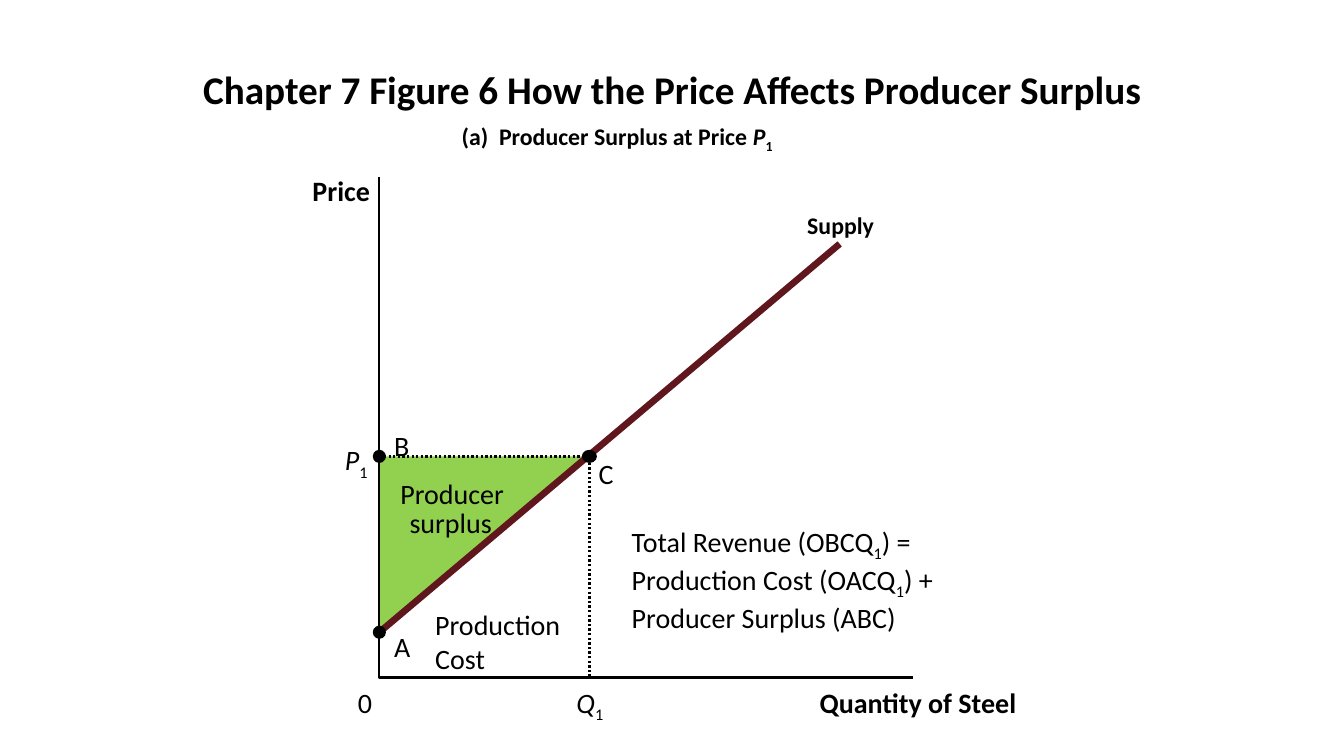
from pptx import Presentation
from pptx.dml.color import RGBColor
from pptx.enum.dml import MSO_LINE
from pptx.enum.shapes import MSO_CONNECTOR, MSO_SHAPE
from pptx.enum.text import MSO_ANCHOR, MSO_AUTO_SIZE, PP_ALIGN
from pptx.oxml.ns import qn
from pptx.util import Pt
from lxml import etree

STRAIGHT = MSO_CONNECTOR.STRAIGHT
OVAL = MSO_SHAPE.OVAL
RECTANGLE = MSO_SHAPE.RECTANGLE
DOTTED = MSO_LINE.ROUND_DOT
FIT_SHAPE = MSO_AUTO_SIZE.SHAPE_TO_FIT_TEXT
MIDDLE = MSO_ANCHOR.MIDDLE
TOP = MSO_ANCHOR.TOP
CENTER = PP_ALIGN.CENTER
LEFT = PP_ALIGN.LEFT

# Content
FONT = "Calibri"
COLORS = {"ink": "000000", "surplus": "92D050", "supply": "5F161D"}
TITLE = "Chapter 7 Figure 6 How the Price Affects Producer Surplus"
SUB = ("1", "sub")

# Key positions on the diagram
AXIS_X, QUANTITY_X, AXIS_END_X = 271, 421, 652.5
AXIS_TOP_Y, PRICE_Y, COST_Y, AXIS_Y = 126.7, 326, 451.6, 484
SUPPLY_END = (599.8, 174.2)
A, B, C = (AXIS_X, COST_Y), (AXIS_X, PRICE_Y), (QUANTITY_X, PRICE_Y)
AXIS_LABEL_Y = 489.5

# Runs as (text, style), left, top, width, size, bold
SURPLUS_LABELS = [
    ([("Producer", "")], 286, 340.6, 75, 20, False),
    ([("surplus", "")], 292.5, 361.4, 60, 20, False),
]
LABELS = [
    ([("Quantity of Steel", "")], 585.4, AXIS_LABEL_Y, 142, 20, True),
    ([("(a)  Producer Surplus at Price ", ""), ("P", "i"), SUB],
     329.8, 86.7, 230.4, 17, True),
    ([("Price", "")], 223.2, 124, 42, 20, True),
    ([("0", "")], 255.6, AXIS_LABEL_Y, 10, 20, False),
    ([("Supply", "")], 576.6, 150.8, 48, 17, True),
    ([("B", "")], 281.5, 306, 11, 20, False),
    ([("A", "")], 281.5, 449.5, 11.5, 20, False),
    ([("C", "")], 427.7, 326.2, 11, 20, False),
    ([("Q", "i"), SUB], 411.8, AXIS_LABEL_Y, 20, 20, False),
    ([("P", "i"), SUB], 246.4, 316.4, 17, 20, False),
]
# Lines of runs, left, top, width, height
NOTES = [
    ([[("Production Cost", "")]], 303.8, 430.6, 115.2, 55.4),
    ([[("Total Revenue (OBCQ", ""), SUB, (") =", "")],
      [("Production Cost (OACQ", ""), SUB,
       (") + Producer Surplus (ABC)", "")]], 444.2, 370.8, 264.2, 80),
]

prs = Presentation()
prs.slide_width, prs.slide_height = Pt(960), Pt(540)
slide = prs.slides.add_slide(prs.slide_layouts[5])
shapes = slide.shapes


def color(name):
    return RGBColor.from_string(COLORS[name])


def set_font(paragraph, size, bold):
    font = paragraph.font
    font.name, font.size, font.bold = FONT, Pt(size), bold
    font.color.rgb = color("ink")


def add_runs(paragraph, runs):
    for text, style in runs:
        run = paragraph.add_run()
        run.text = text
        if style == "i":
            run.font.italic = True
        elif style == "sub":
            run._r.get_or_add_rPr().set("baseline", "-25000")


def fill_plain(shape, name):
    shape.shadow.inherit = False
    shape.fill.solid()
    shape.fill.fore_color.rgb = color(name)
    shape.line.fill.background()


def write_label(shape, runs, size, bold):
    frame = shape.text_frame
    frame.margin_left = frame.margin_right = 0
    frame.margin_top = frame.margin_bottom = 0
    frame.word_wrap = False
    frame.auto_size = FIT_SHAPE
    frame.vertical_anchor = TOP
    paragraph = frame.paragraphs[0]
    paragraph.alignment = LEFT
    set_font(paragraph, size, bold)
    add_runs(paragraph, runs)


def add_outline(points, close=False):
    start, *rest = [(Pt(x), Pt(y)) for x, y in points]
    builder = shapes.build_freeform(*start)
    builder.add_line_segments(rest, close=close)
    outline = builder.convert_to_shape()
    outline.shadow.inherit = False
    return outline


def add_path(points, dash=None):
    path_shape = add_outline(points)
    path_shape.fill.background()
    path_shape.line.color.rgb = color("ink")
    path_shape.line.width = Pt(1.63)
    if dash is not None:
        path_shape.line.dash_style = dash


# Title
title = shapes.title
title.left, title.top, title.width, title.height = Pt(48), Pt(21.6), Pt(864), Pt(90)
title.text_frame.text = TITLE
title.text_frame.vertical_anchor = MIDDLE
heading = title.text_frame.paragraphs[0]
heading.alignment, heading.line_spacing = CENTER, 0.8
set_font(heading, 28, True)

# Producer surplus area
fill_plain(add_outline([C, B, A], close=True), "surplus")
for runs, left, top, width, size, bold in SURPLUS_LABELS:
    label = shapes.add_shape(RECTANGLE, Pt(left), Pt(top), Pt(width), Pt(size * 1.22))
    fill_plain(label, "surplus")
    write_label(label, runs, size, bold)

# Axes, supply curve and price guides
add_path([(AXIS_X, AXIS_TOP_Y), (AXIS_X, AXIS_Y), (AXIS_END_X, AXIS_Y)])
supply = shapes.add_connector(STRAIGHT, *[Pt(v) for v in A + SUPPLY_END])
supply.line.color.rgb = color("supply")
supply.line.width = Pt(4.75)
etree.SubElement(supply._element.spPr, qn("a:effectLst"))
add_path([B, C, (QUANTITY_X, AXIS_Y)], DOTTED)

# Points
for (x, y), width in ((B, 9.4), (A, 9.4), (C, 10.8)):
    dot = shapes.add_shape(OVAL, Pt(x - width / 2), Pt(y - 4.7), Pt(width), Pt(9.4))
    fill_plain(dot, "ink")

# Labels
for runs, left, top, width, size, bold in LABELS:
    label = shapes.add_textbox(Pt(left), Pt(top), Pt(width), Pt(size * 1.22))
    write_label(label, runs, size, bold)

# Notes
for lines, left, top, width, height in NOTES:
    note = shapes.add_textbox(Pt(left), Pt(top), Pt(width), Pt(height))
    note.text_frame.word_wrap = True
    note.text_frame.auto_size = FIT_SHAPE
    paragraph = note.text_frame.paragraphs[0]
    set_font(paragraph, 20, False)
    for number, runs in enumerate(lines):
        if number:
            paragraph.add_line_break()
        add_runs(paragraph, runs)

prs.save("out.pptx")
